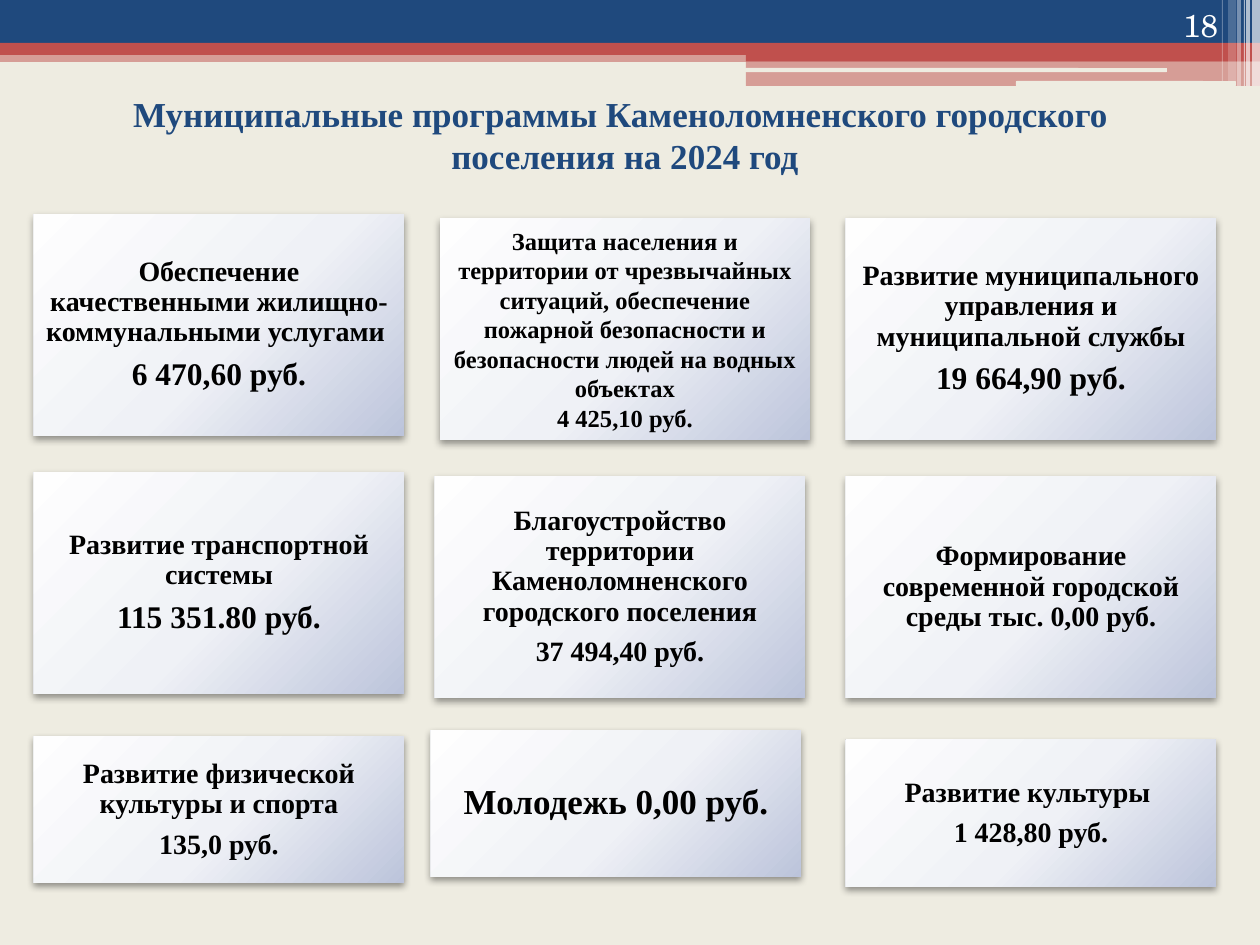
from dataclasses import dataclass
from typing import Optional

import lxml.etree
import pptx
import pptx.dml.color
import pptx.enum.shapes
import pptx.enum.text
import pptx.oxml
import pptx.oxml.ns
import pptx.util

EMU_PER_PX = 914400 / 126
COLORS = {
    "background": "EEECE1",
    "blue": "1F497D",
    "red": "C0504D",
    "white": "FFFFFF",
    "black": "000000",
    "card_light": "FEFEFE",
    "card_middle": "EFF1F6",
    "card_dark": "BCC4DB",
}
SERIF = "Times New Roman"
SHAPES = pptx.enum.shapes.MSO_SHAPE
ANCHORS = pptx.enum.text.MSO_ANCHOR
ALIGNMENTS = pptx.enum.text.PP_ALIGN
NAMESPACE = pptx.oxml.ns.nsdecls("a")


@dataclass(frozen=True)
class Bar:
    left: int
    top: int
    width: int
    height: int
    color: str
    opacity: int = 100
    rounded: bool = False


@dataclass(frozen=True)
class Card:
    left: int
    top: int
    height: int
    lines: tuple[str, ...]
    sizes: tuple[int, ...]
    inset: int = 9
    line_spacing: Optional[float] = 0.9
    space_after: int = 6


BARS = [
    Bar(0, 50, 1260, 12, "red", 50),
    Bar(0, 0, 1260, 43, "blue"),
    Bar(0, 43, 1260, 12, "red"),
    Bar(746, 49, 514, 12, "red"),
    Bar(746, 61, 514, 25, "red", 50),
    Bar(745, 68, 422, 4, "background", rounded=True),
    Bar(1016, 81, 220, 5, "background", rounded=True),
    Bar(1252, 0, 8, 86, "white", 65),
    Bar(1246, 0, 4, 86, "white", 65),
    Bar(1244, 0, 1, 86, "white", 60),
    Bar(1237, 0, 4, 86, "white", 40),
    Bar(1228, 0, 8, 81, "white", 20),
    Bar(1222, 0, 1, 81, "white", 30),
]

CARD_WIDTH = 370
TALL, SHORT = 222, 147
CARDS = [
    Card(34, 214, TALL,
         ("Обеспечение качественными жилищно-коммунальными услугами ", "6 470,60 руб."), (16, 18)),
    Card(440, 218, TALL,
         ("Защита населения и территории от чрезвычайных ситуаций, обеспечение пожарной "
          "безопасности и безопасности людей на водных объектах", "4 425,10 руб."),
         (14, 14), inset=8, line_spacing=None, space_after=0),
    Card(846, 218, TALL,
         ("Развитие муниципального управления и муниципальной службы", "19 664,90 руб."), (16, 18)),
    Card(34, 472, TALL, ("Развитие транспортной системы", "115 351.80 руб."), (16, 18)),
    Card(435, 476, TALL,
         ("Благоустройство территории Каменоломненского городского поселения",
          "37 494,40 руб."), (16, 16)),
    Card(846, 476, TALL, ("Формирование современной городской среды тыс. 0,00 руб.",), (16,)),
    Card(34, 736, SHORT, ("Развитие физической культуры и спорта", "135,0 руб."), (16, 16)),
    Card(431, 730, SHORT, ("Молодежь 0,00 руб.",), (20,), inset=10),
    Card(846, 740, SHORT, ("Развитие культуры ", "1 428,80 руб."), (16, 16)),
]


def px(length: int) -> int:
    return round(length * EMU_PER_PX)


def rgb(name: str) -> pptx.dml.color.RGBColor:
    return pptx.dml.color.RGBColor.from_string(COLORS[name])


def add_box(slide, kind, left: int, top: int, width: int, height: int):
    shape = slide.shapes.add_shape(kind, px(left), px(top), px(width), px(height))
    shape.shadow.inherit = False
    shape.line.fill.background()
    return shape


def write_text(shape, lines, *, sizes, color, font=SERIF, bold=True,
               alignment=ALIGNMENTS.CENTER, anchor=ANCHORS.MIDDLE,
               insets=(13, 6), line_spacing=None, space_after=0) -> None:
    frame = shape.text_frame
    frame.word_wrap = True
    frame.auto_size = pptx.enum.text.MSO_AUTO_SIZE.NONE
    frame.vertical_anchor = anchor
    frame.margin_left = frame.margin_right = px(insets[0])
    frame.margin_top = frame.margin_bottom = px(insets[1])
    for index, (line, size) in enumerate(zip(lines, sizes)):
        paragraph = frame.add_paragraph() if index else frame.paragraphs[0]
        paragraph.alignment = alignment
        paragraph.line_spacing = line_spacing
        paragraph.space_after = pptx.util.Pt(space_after)
        run = paragraph.add_run()
        run.text = line
        run.font.name = font
        run.font.size = pptx.util.Pt(size)
        run.font.bold = bold
        run.font.color.rgb = rgb(color)


def add_bar(slide, bar: Bar) -> None:
    kind = SHAPES.ROUNDED_RECTANGLE if bar.rounded else SHAPES.RECTANGLE
    shape = add_box(slide, kind, bar.left, bar.top, bar.width, bar.height)
    shape.fill.solid()
    shape.fill.fore_color.rgb = rgb(bar.color)
    if bar.opacity < 100:
        color = shape._element.spPr.find(".//" + pptx.oxml.ns.qn("a:srgbClr"))
        alpha = lxml.etree.SubElement(color, pptx.oxml.ns.qn("a:alpha"))
        alpha.set("val", str(bar.opacity * 1000))


def style_card(shape) -> None:
    stops = "".join(
        f'<a:gs pos="{position * 1000}"><a:srgbClr val="{COLORS[name]}"/></a:gs>'
        for position, name in ((0, "card_light"), (55, "card_middle"), (100, "card_dark"))
    )
    gradient = pptx.oxml.parse_xml(
        f'<a:gradFill {NAMESPACE} rotWithShape="1"><a:gsLst>{stops}</a:gsLst>'
        '<a:path path="circle"><a:fillToRect l="-40000" t="-90000" r="140000" b="190000"/>'
        '</a:path></a:gradFill>'
    )
    shadow = pptx.oxml.parse_xml(
        f'<a:outerShdw {NAMESPACE} blurRad="{pptx.util.Pt(4.1)}" dist="{pptx.util.Pt(2)}" '
        f'dir="5400000" rotWithShape="0"><a:srgbClr val="{COLORS["black"]}">'
        '<a:alpha val="40000"/></a:srgbClr></a:outerShdw>'
    )
    properties = shape._element.spPr
    properties.find(pptx.oxml.ns.qn("a:prstGeom")).addnext(gradient)
    properties.find(pptx.oxml.ns.qn("a:effectLst")).append(shadow)


def add_card(slide, card: Card) -> None:
    shape = add_box(slide, SHAPES.RECTANGLE, card.left, card.top, CARD_WIDTH, card.height)
    style_card(shape)
    write_text(shape, card.lines, sizes=card.sizes, color="black",
               insets=(card.inset, card.inset), line_spacing=card.line_spacing,
               space_after=card.space_after)


def main() -> None:
    presentation = pptx.Presentation()
    presentation.slide_width, presentation.slide_height = px(1260), px(945)
    slide = presentation.slides.add_slide(presentation.slide_layouts[5])
    slide.background.fill.solid()
    slide.background.fill.fore_color.rgb = rgb("background")

    for bar in BARS:
        add_bar(slide, bar)

    page_number = slide.shapes.add_textbox(px(1126), 0, px(105), px(50))
    write_text(page_number, ("18",), sizes=(18,), color="white", font="TeX Gyre Schola",
               bold=False, alignment=ALIGNMENTS.RIGHT, anchor=ANCHORS.BOTTOM)

    for card in CARDS:
        add_card(slide, card)

    title = slide.shapes.title
    title.left, title.top, title.width, title.height = px(0), px(86), px(1250), px(97)
    write_text(title, ("Муниципальные программы Каменоломненского городского ",
                       "поселения на 2024 год"), sizes=(20, 20), color="blue")

    presentation.save("out.pptx")


if __name__ == "__main__":
    main()
